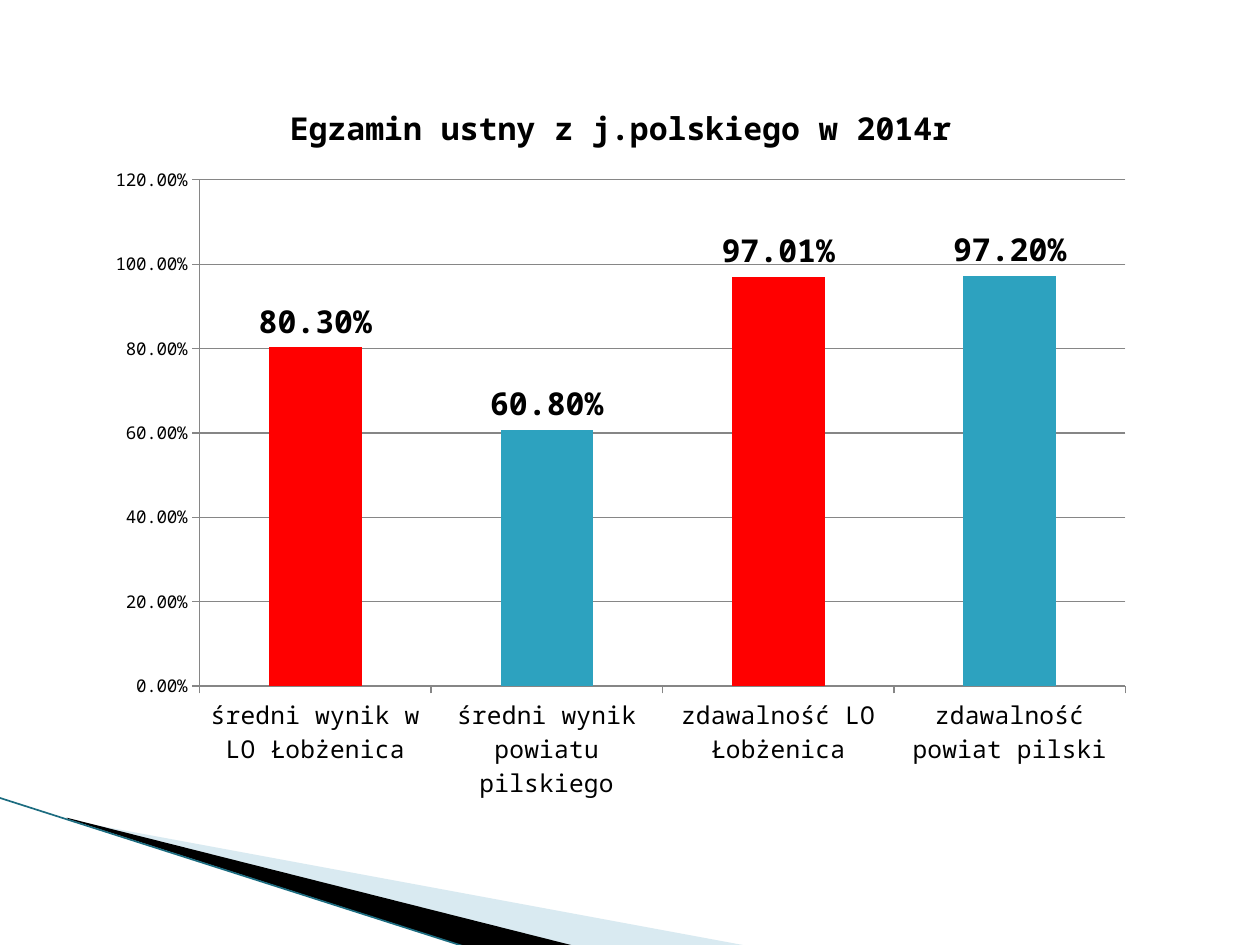
from dataclasses import dataclass

from lxml.etree import SubElement
from pptx import Presentation
from pptx.chart.data import CategoryChartData
from pptx.dml.color import RGBColor
from pptx.enum.chart import XL_CHART_TYPE, XL_LABEL_POSITION, XL_TICK_MARK
from pptx.enum.shapes import MSO_CONNECTOR
from pptx.oxml import parse_xml
from pptx.oxml.ns import nsdecls, qn
from pptx.util import Emu, Pt

PX = 9144  # 100 px to the inch


@dataclass(frozen=True)
class Theme:
    font: str = "Noto Sans Mono"
    text: str = "000000"
    bar: str = "2DA2BF"
    highlight: str = "FF0000"
    grid: str = "868686"
    pale: str = "A0CBDC"
    dark: str = "000000"
    edge: str = "1C6C80"
    axis_size: int = 10
    category_size: int = 14
    heading_size: int = 18


THEME = Theme()
TITLE = "Egzamin ustny z j.polskiego w 2014r"
RESULTS = [  # category, value, highlighted
    ("średni wynik w LO Łobżenica", 0.803, True),
    ("średni wynik powiatu pilskiego", 0.608, False),
    ("zdawalność LO Łobżenica", 0.9701, True),
    ("zdawalność powiat pilski", 0.972, False),
]
CHART_BOX = (75, 60, 835, 591)
PLOT_BOX = {"x": 0.1, "y": 0.14, "w": 0.88, "h": 0.68}
WEDGES = [  # points, colour, opacity in percent
    ([(55, 651), (595, 751), (456, 751), (55, 650)], THEME.pale, 40),
    ([(53, 649), (457, 751), (372, 752), (54, 650)], THEME.dark, 100),
]
EDGE = (-1, 633, 371, 752)


def px(*lengths):
    return [Emu(length * PX) for length in lengths]


def color(value):
    return RGBColor.from_string(value)


def style_font(font, size, bold=False):
    font.name, font.size, font.bold = THEME.font, Pt(size), bold
    font.color.rgb = color(THEME.text)


def put_text(frame, text, **style):
    span = frame.paragraphs[0].add_run()
    span.text = text
    style_font(span.font, **style)


def add_wedge(page, points, fill, opacity):
    builder = page.shapes.build_freeform(*points[0], scale=PX)
    builder.add_line_segments(points[1:], close=True)
    wedge = builder.convert_to_shape()
    wedge.shadow.inherit = False
    wedge.line.fill.background()
    wedge.fill.solid()
    wedge.fill.fore_color.rgb = color(fill)
    if opacity < 100:
        tint = wedge.fill._xPr.find(".//" + qn("a:srgbClr"))
        SubElement(tint, qn("a:alpha"), val=str(opacity * 1000))


def add_edge(page):
    edge = page.shapes.add_connector(MSO_CONNECTOR.STRAIGHT, *px(*EDGE))
    edge.line.color.rgb = color(THEME.edge)
    edge.line.width = Pt(0.95)
    SubElement(edge._element.spPr, qn("a:effectLst"))


def fix_plot_area(chart):
    """Pin the inner plot area to PLOT_BOX, as fractions of the chart."""
    places = "".join(f'<c:{side}Mode val="edge"/>' for side in "xy")
    places += "".join(f'<c:{key} val="{value}"/>' for key, value in PLOT_BOX.items())
    layout = parse_xml(
        f'<c:layout {nsdecls("c")}><c:manualLayout>'
        f'<c:layoutTarget val="inner"/>{places}</c:manualLayout></c:layout>'
    )
    plot_area = chart._chartSpace.chart.plotArea
    for old in plot_area.findall(qn("c:layout")):
        plot_area.remove(old)
    plot_area.insert(0, layout)


def style_axes(chart):
    values, categories = chart.value_axis, chart.category_axis
    values.minimum_scale, values.maximum_scale, values.major_unit = 0, 1.2, 0.2
    values.has_major_gridlines = True
    values.tick_labels.number_format = "0.00%"
    values.tick_labels.number_format_is_linked = False
    for axis, size in ((values, THEME.axis_size), (categories, THEME.category_size)):
        axis.major_tick_mark = XL_TICK_MARK.OUTSIDE
        style_font(axis.tick_labels.font, size)
    for line in (values.format.line, categories.format.line, values.major_gridlines.format.line):
        line.color.rgb = color(THEME.grid)
        line.width = Pt(0.75)


def style_bars(chart):
    plot = chart.plots[0]
    plot.gap_width = 150
    plot.vary_by_categories = False
    series = plot.series[0]
    series.format.fill.solid()
    series.format.fill.fore_color.rgb = color(THEME.bar)
    for index, (_, _, highlighted) in enumerate(RESULTS):
        if highlighted:
            fill = series.points[index].format.fill
            fill.solid()
            fill.fore_color.rgb = color(THEME.highlight)
    labels = series.data_labels
    labels.show_value = True
    labels.number_format = "0.00%"
    labels.number_format_is_linked = False
    labels.position = XL_LABEL_POSITION.OUTSIDE_END
    style_font(labels.font, THEME.heading_size, bold=True)


def add_results_chart(page):
    data = CategoryChartData(number_format="0.00%")
    data.categories = [name for name, _, _ in RESULTS]
    data.add_series("Series 1", [value for _, value, _ in RESULTS])
    chart = page.shapes.add_chart(XL_CHART_TYPE.COLUMN_CLUSTERED, *px(*CHART_BOX), data).chart
    style_font(chart.font, THEME.axis_size)
    chart.has_legend = False
    chart.has_title = True
    put_text(chart.chart_title.text_frame, TITLE, size=THEME.heading_size, bold=True)
    chart.chart_title.include_in_layout = False
    fix_plot_area(chart)
    style_axes(chart)
    style_bars(chart)


def main():
    deck = Presentation()
    deck.slide_width, deck.slide_height = px(1000, 750)
    page = deck.slides.add_slide(deck.slide_layouts[6])
    for wedge in WEDGES:
        add_wedge(page, *wedge)
    add_edge(page)
    add_results_chart(page)
    deck.save("out.pptx")


if __name__ == "__main__":
    main()
